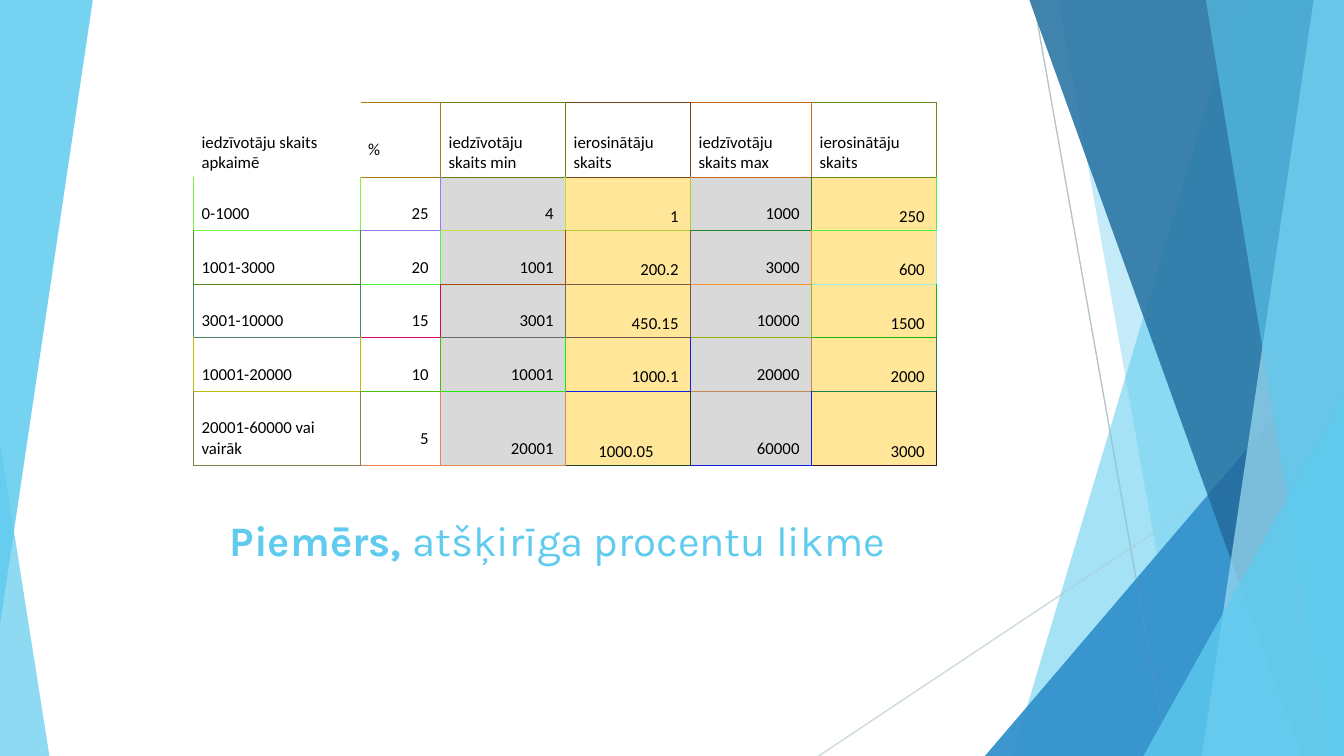
from lxml import etree
from pptx import Presentation
from pptx.dml.color import RGBColor
from pptx.enum.shapes import MSO_CONNECTOR, MSO_SHAPE
from pptx.enum.text import MSO_ANCHOR, PP_ALIGN
from pptx.oxml import parse_xml
from pptx.oxml.ns import nsdecls, qn
from pptx.util import Inches, Pt

LINE = MSO_CONNECTOR.STRAIGHT
TRI = MSO_SHAPE.ISOSCELES_TRIANGLE
MID, LOW = MSO_ANCHOR.MIDDLE, MSO_ANCHOR.BOTTOM
LEFT, MIDDLE, RIGHT = PP_ALIGN.LEFT, PP_ALIGN.CENTER, PP_ALIGN.RIGHT

WIDE, HIGH = 13.33, 7.5
SKY, GRAY, GOLD = "5FCBEF", "D9D9D9", "FFE699"
TITLE = [("Piemērs, ", True), ("atšķirīga procentu likme", False)]

ROWS = [
    ["iedzīvotāju skaits apkaimē", "%", "iedzīvotāju skaits min",
     "ierosinātāju skaits", "iedzīvotāju skaits max", "ierosinātāju skaits"],
    ["0-1000", "25", "4", "1", "1000", "250"],
    ["1001-3000", "20", "1001", "200.2", "3000", "600"],
    ["3001-10000", "15", "3001", "450.15", "10000", "1500"],
    ["10001-20000", "10", "10001", "1000.1", "20000", "2000"],
    ["20001-60000 vai vairāk", "5", "20001", "1000.05", "60000", "3000"],
]
EDGES = [
    ["FFFFFF", "B07915", "707D15", "78461C", "C8681C", "689018"],
    ["78F640", "9879FC", "C0E13A", "B0CA3D", "208623", "48F640"],
    ["508C23", "48F640", "A84710", "78604C", "F89628", "A0E7DE"],
    ["508265", "D80665", "686A65", "705852", "98B30A", "18B50A"],
    ["C0BB0A", "48BE0A", "20E60A", "101FE4", "C08B53", "207A53"],
    ["888153", "F08253", "E08653", "20461D", "101FE4", "38172D"],
]
WIDTHS = [1.65, 0.8, 1.24, 1.24, 1.2, 1.24]
HEIGHTS = [0.74, 0.53, 0.53, 0.53, 0.53, 0.74]
FILLS = [None, None, GRAY, GOLD, GRAY, GOLD]

RAYS = [((10.25, 0), (11.58, HIGH)), ((WIDE, 4.03), (8.12, HIGH))]
BANDS = [(12.28, 10.04), (10.5, 11.83), (9.77, 3.33),
         (10.21, 12.91), (13.03, 11.92), (11.96, 13.18), (11.34, 3.93)]
PEAKS = (2, 6)
BACK = {
    "rays": [(SKY, 70), (SKY, 70)],
    "bands": [(SKY, 36), (SKY, 20), ("17B0E4", 66), ("17B0E4", 50),
              ("2E83C3", 70), ("226292", 80), ("17B0E4", 66)],
    "corner": (4.39, 0.49, 3.11, 0, 0, 70),
}
FRONT = {
    "rays": [("BFBFBF", 100), ("D9D9D9", 100)],
    "bands": [(SKY, 30), (SKY, 20), ("2E83C3", 72), ("226292", 70),
              ("9FE0F5", 70), (SKY, 65), (SKY, 80)],
    "corner": (0, 0.92, 6.2, 1, 180, 85),
}


def color(code):
    return RGBColor.from_string(code)


def fade(shape, alpha):
    for tone in shape._element.spPr.iter(qn("a:srgbClr")):
        etree.SubElement(tone, qn("a:alpha")).set("val", str(alpha * 1000))


def paint(shape, code, alpha):
    shape.shadow.inherit = False
    shape.fill.solid()
    shape.fill.fore_color.rgb = color(code)
    shape.line.fill.background()
    fade(shape, alpha)


def draw_ray(start, end, code, alpha):
    ray = slide.shapes.add_connector(LINE, *[Inches(v) for v in start + end])
    ray.line.color.rgb = color(code)
    ray.line.width = Pt(0.75)
    fade(ray, alpha)
    etree.SubElement(ray._element.spPr, qn("a:effectLst"))


def draw_peak(left, top, width, height, tip, turn, code, alpha):
    peak = slide.shapes.add_shape(
        TRI, *[Inches(v) for v in (left, top, width, height)])
    peak.adjustments[0] = tip
    peak.rotation = turn
    paint(peak, code, alpha)


def draw_band(top, low, code, alpha):
    form = slide.shapes.build_freeform(Inches(top), 0)
    form.add_line_segments([(Inches(x), Inches(y)) for x, y in
                            [(WIDE, 0), (WIDE, HIGH), (low, HIGH)]])
    paint(form.convert_to_shape(), code, alpha)


def draw_layer(layer):
    for (start, end), tone in zip(RAYS, layer["rays"]):
        draw_ray(start, end, *tone)
    for i, ((a, b), tone) in enumerate(zip(BANDS, layer["bands"])):
        if i in PEAKS:
            draw_peak(a, b, WIDE - a, HIGH - b, 1, 0, *tone)
        else:
            draw_band(a, b, *tone)
    top, width, height, tip, turn, alpha = layer["corner"]
    draw_peak(0, top, width, height, tip, turn, SKY, alpha)


def draw_edges(cell, codes):
    props = cell._tc.get_or_add_tcPr()
    for i, (side, code) in enumerate(zip("LRTB", codes)):
        props.insert(i, parse_xml(
            f'<a:ln{side} {nsdecls("a")} w="9525"><a:solidFill>'
            f'<a:srgbClr val="{code}"/></a:solidFill></a:ln{side}>'))


def fill_cell(cell, r, c):
    head, last = r == 0, r == len(ROWS) - 1
    cell.text = ROWS[r][c]
    low = c != 1 if head else FILLS[c] == GOLD
    cell.vertical_anchor = LOW if low else MID
    cell.margin_left, cell.margin_right = Inches(0.08), Inches(0.12)
    cell.margin_top = Inches(0.44 if last and FILLS[c] == GRAY else 0.24)
    cell.margin_bottom = Inches(0.04)
    para = cell.text_frame.paragraphs[0]
    para.alignment = LEFT if head or c == 0 else RIGHT
    if last and c == 3:
        para.alignment = MIDDLE
    para.font.name, para.font.size = "Calibri", Pt(12)
    para.font.color.rgb = color("000000")
    if FILLS[c] and not head:
        cell.fill.solid()
        cell.fill.fore_color.rgb = color(FILLS[c])
    else:
        cell.fill.background()
    own = EDGES[r][c]
    draw_edges(cell, (EDGES[r][max(c - 1, 0)], own, EDGES[max(r - 1, 0)][c], own))


def draw_table():
    table = slide.shapes.add_table(
        len(ROWS), len(WIDTHS), Inches(1.92), Inches(1.02),
        Inches(sum(WIDTHS)), Inches(sum(HEIGHTS))).table
    table.first_row = table.horz_banding = False
    for col, width in zip(table.columns, WIDTHS):
        col.width = Inches(width)
    for r, height in enumerate(HEIGHTS):
        table.rows[r].height = Inches(height)
        for c in range(len(WIDTHS)):
            fill_cell(table.cell(r, c), r, c)


def write_title():
    title = slide.shapes.title
    title.left, title.top = Inches(1.08), Inches(4.98)
    title.width, title.height = Inches(9.06), Inches(1.2)
    frame = title.text_frame
    frame.word_wrap = True
    frame.vertical_anchor = LOW
    frame.margin_right, frame.margin_bottom = Inches(0.26), Inches(0.57)
    para = frame.paragraphs[0]
    para.alignment, para.line_spacing = MIDDLE, 0.9
    para.font.name, para.font.size = "Karla", Pt(30)
    para.font.color.rgb = color(SKY)
    for text, bold in TITLE:
        run = para.add_run()
        run.text, run.font.bold = text, bold


deck = Presentation()
deck.slide_width, deck.slide_height = Inches(WIDE), Inches(HIGH)
slide = deck.slides.add_slide(deck.slide_layouts[5])
for layer in (BACK, FRONT):
    draw_layer(layer)
write_title()
draw_table()
deck.save("out.pptx")
